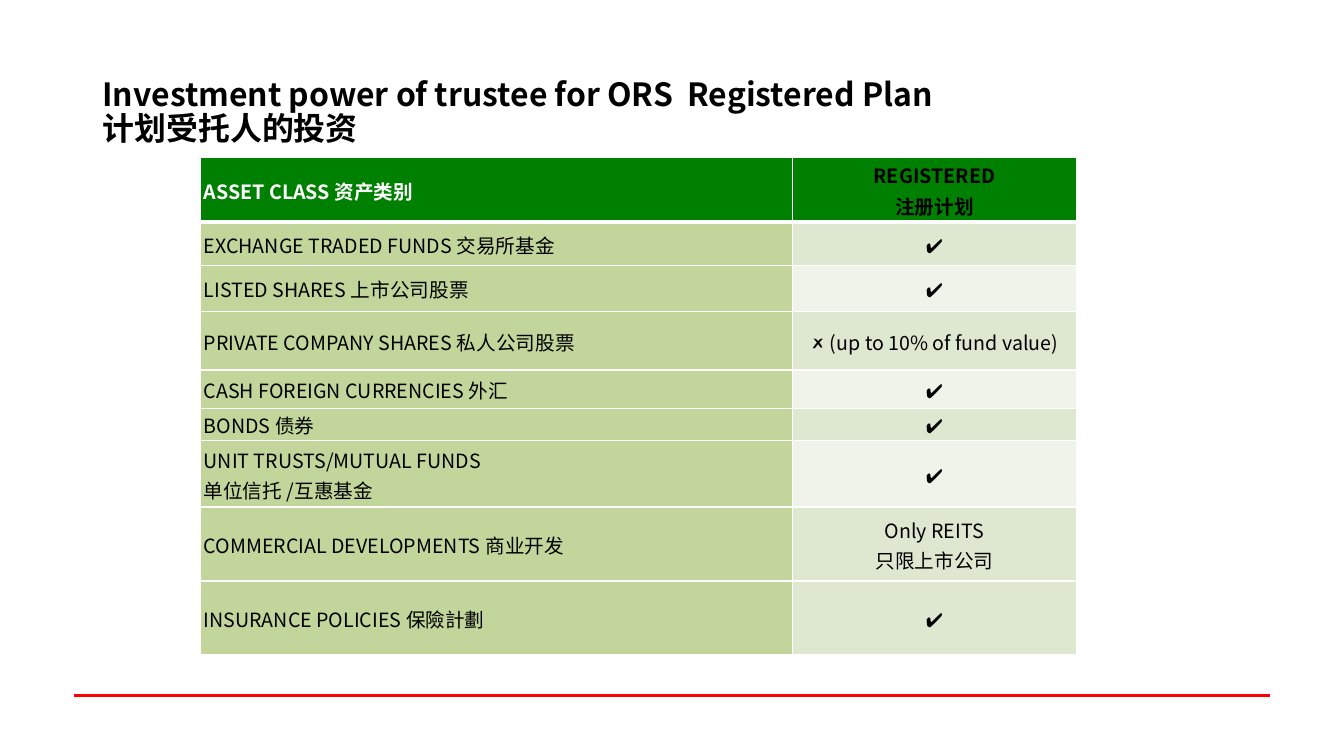
from lxml import etree
from pptx import Presentation
from pptx.dml.color import RGBColor
from pptx.enum.shapes import MSO_CONNECTOR
from pptx.enum.text import MSO_ANCHOR, PP_ALIGN
from pptx.oxml.ns import qn
from pptx.util import Pt

STRAIGHT = MSO_CONNECTOR.STRAIGHT
MIDDLE = MSO_ANCHOR.MIDDLE
LEFT, CENTER = PP_ALIGN.LEFT, PP_ALIGN.CENTER

FONT = "Noto Sans CJK TC"
BLACK = RGBColor(0x00, 0x00, 0x00)
WHITE = RGBColor(0xFF, 0xFF, 0xFF)
RED = RGBColor(0xFF, 0x00, 0x00)
GREEN = RGBColor(0x00, 0x80, 0x00)
OLIVE = RGBColor(0xC2, 0xD5, 0x9B)
MIST = RGBColor(0xDE, 0xE7, 0xD0)
PALE = RGBColor(0xEF, 0xF3, 0xE9)

TICK = "✔"
# Row height, asset class, registered plan, fill of the second column
ROWS = [
    (46.08, "ASSET CLASS 资产类别", "REGISTERED\n注册计划", GREEN),
    (30.96, "EXCHANGE TRADED FUNDS 交易所基金", TICK, MIST),
    (33.12, "LISTED SHARES 上市公司股票", TICK, PALE),
    (41.76, "PRIVATE COMPANY SHARES 私人公司股票", "🗶 (up to 10% of fund value)", MIST),
    (27.36, "CASH FOREIGN CURRENCIES 外汇", TICK, PALE),
    (23.04, "BONDS 债券", TICK, MIST),
    (47.52, "UNIT TRUSTS/MUTUAL FUNDS\n单位信托 /互惠基金", TICK, PALE),
    (52.8, "COMMERCIAL DEVELOPMENTS 商业开发", "Only REITS\n只限上市公司", MIST),
    (52.8, "INSURANCE POLICIES 保險計劃", TICK, MIST),
]


def add_run(p, text, size, color, bold):
    r = p.add_run()
    r.text = text
    r.font.name = FONT
    r.font.size = Pt(size)
    r.font.bold = bold
    r.font.color.rgb = color
    ea = etree.Element(qn("a:ea"), typeface=FONT)
    r.font._element.find(qn("a:latin")).addnext(ea)


def set_borders(cell, widths):
    tcPr = cell._tc.get_or_add_tcPr()
    for i, (side, width) in enumerate(widths.items()):
        ln = etree.Element(qn(f"a:ln{side}"), w=str(Pt(width)))
        fill = etree.SubElement(ln, qn("a:solidFill"))
        etree.SubElement(fill, qn("a:srgbClr"), val=str(WHITE))
        tcPr.insert(i, ln)


prs = Presentation()
prs.slide_width, prs.slide_height = Pt(960), Pt(540)
s = prs.slides.add_slide(prs.slide_layouts[5])

# Footer rule
rule = s.shapes.add_connector(STRAIGHT, Pt(52.8), Pt(496.8), Pt(907.2), Pt(496.8))
rule.line.color.rgb = RED
rule.line.width = Pt(1.5)
etree.SubElement(rule._element.spPr, qn("a:effectLst"))

# Title
title = s.shapes.title
title.left, title.top, title.width, title.height = Pt(66), Pt(28.8), Pt(828), Pt(104.4)
tf = title.text_frame
tf.word_wrap = True
tf.vertical_anchor = MIDDLE
p = tf.paragraphs[0]
p.alignment = LEFT
p.line_spacing = 0.9
add_run(p, "Investment power of trustee for ORS  Registered Plan", 22.8, BLACK, True)
p.add_line_break()
add_run(p, "计划受托人的投资", 22.8, BLACK, True)

# Asset class table
height = sum(row[0] for row in ROWS)
frame = s.shapes.add_table(len(ROWS), 2, Pt(142.8), Pt(112.4), Pt(626.4), Pt(height))
table = frame.table
table.columns[0].width, table.columns[1].width = Pt(423), Pt(203.4)

for i, (row_height, asset, plan, plan_fill) in enumerate(ROWS):
    header = i == 0
    table.rows[i].height = Pt(row_height)
    columns = [
        (asset, LEFT, GREEN if header else OLIVE, WHITE if header else BLACK),
        (plan, CENTER, plan_fill, BLACK),
    ]
    for j, (text, align, fill, color) in enumerate(columns):
        cell = table.cell(i, j)
        cell.fill.solid()
        cell.fill.fore_color.rgb = fill
        set_borders(cell, {"L": 1, "R": 1, "T": 3 if i == 1 else 1, "B": 3 if header else 1})
        cell.vertical_anchor = MIDDLE
        cell.margin_left = cell.margin_right = Pt(2.7)
        cell.margin_top = cell.margin_bottom = Pt(0)
        tf = cell.text_frame
        for k, line in enumerate(text.split("\n")):
            p = tf.add_paragraph() if k else tf.paragraphs[0]
            p.alignment = align
            p.line_spacing = 1.07
            add_run(p, line, 14, color, header)

prs.save("out.pptx")
